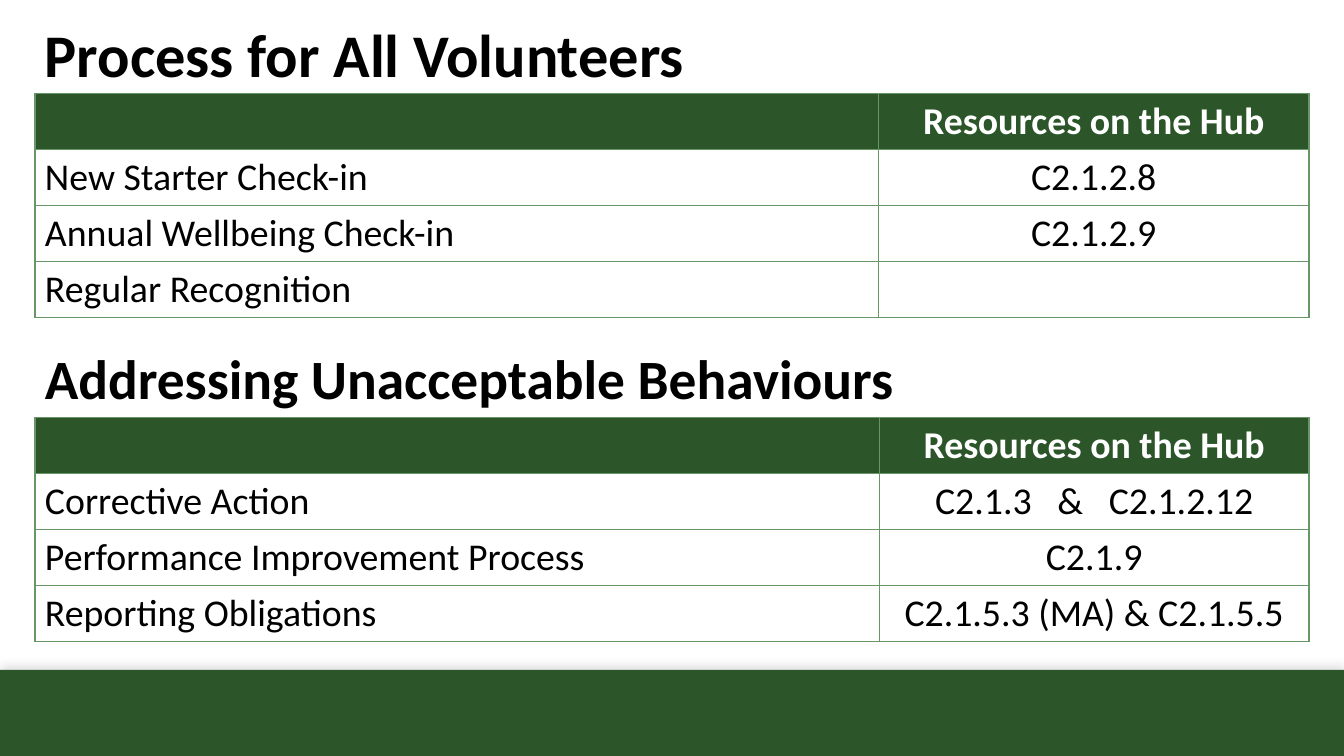
import lxml.etree
import pptx
import pptx.dml.color
import pptx.enum.shapes
import pptx.enum.text
import pptx.oxml.ns
import pptx.util

Cm = pptx.util.Cm
Pt = pptx.util.Pt
RGBColor = pptx.dml.color.RGBColor
ALIGN = pptx.enum.text.PP_ALIGN
qn = pptx.oxml.ns.qn

FOREST = RGBColor(0x2C, 0x56, 0x29)
SAGE = RGBColor(0x69, 0x96, 0x67)
BLACK = RGBColor(0, 0, 0)
WHITE = RGBColor(0xFF, 0xFF, 0xFF)

PAGE_WIDTH, PAGE_HEIGHT = 33.87, 19.05
MARGIN = 0.88
TABLE_WIDTH = 32.11
ROW_HEIGHT = 1.41
HEADING_WIDTH, HEADING_HEIGHT = 29.21, 1.55
BAND_TOP = 16.88
RESOURCES = "Resources on the Hub"


def add_element(parent, tag, **attributes):
    return lxml.etree.SubElement(parent, qn(tag), attributes)


def add_color(parent, color):
    return add_element(parent, "a:srgbClr", val=str(color))


def write(frame, text, size=27, color=BLACK, bold=False, align=ALIGN.LEFT,
          line_spacing=None):
    """Fill a frame with one paragraph; text is a string or (string, tracking) pairs."""
    para = frame.paragraphs[0]
    para.alignment = align
    para.line_spacing = line_spacing
    pieces = [(text, 0)] if isinstance(text, str) else text
    for words, tracking in pieces:
        span = para.add_run()
        span.text = words
        span.font.name = "Calibri"
        span.font.size = Pt(size)
        span.font.bold = bold
        span.font.color.rgb = color
        if tracking:
            span.font._element.set("spc", str(tracking))


class VolunteerSlide:
    def __init__(self, page):
        self.page = page

    def band(self, top):
        """Draw the footer band with a soft shadow above it."""
        box = self.page.shapes.add_shape(
            pptx.enum.shapes.MSO_SHAPE.RECTANGLE,
            0, Cm(top), Cm(PAGE_WIDTH), Cm(PAGE_HEIGHT - top))
        box.fill.solid()
        box.fill.fore_color.rgb = FOREST
        box.line.fill.background()
        box.shadow.inherit = False
        effects = box._element.spPr.find(qn("a:effectLst"))
        shadow = add_element(effects, "a:outerShdw", blurRad=str(Pt(7)),
                             dist=str(Pt(3)), dir="16200000", rotWithShape="0")
        add_element(add_color(shadow, BLACK), "a:alpha", val="13000")

    def heading(self, text, top, size, line_spacing):
        box = self.page.shapes.add_textbox(
            Cm(MARGIN), Cm(top), Cm(HEADING_WIDTH), Cm(HEADING_HEIGHT))
        box.text_frame.word_wrap = True
        box.text_frame.vertical_anchor = pptx.enum.text.MSO_ANCHOR.MIDDLE
        write(box.text_frame, text, size=size, bold=True, line_spacing=line_spacing)

    def border(self, cell):
        properties = cell._tc.get_or_add_tcPr()
        for side in ("L", "R", "T", "B"):
            line = add_element(properties, f"a:ln{side}", w=str(Pt(1)))
            add_color(add_element(line, "a:solidFill"), SAGE)

    def table(self, rows, top, first_width):
        table = self.page.shapes.add_table(
            len(rows), 2, Cm(MARGIN), Cm(top),
            Cm(TABLE_WIDTH), Cm(ROW_HEIGHT * len(rows))).table
        table.horz_banding = False
        table.columns[0].width = Cm(first_width)
        table.columns[1].width = Cm(TABLE_WIDTH - first_width)
        for row, texts in enumerate(rows):
            is_header = row == 0
            for column, text in enumerate(texts):
                cell = table.cell(row, column)
                self.border(cell)
                cell.fill.solid()
                cell.fill.fore_color.rgb = FOREST if is_header else WHITE
                if text:
                    write(cell.text_frame, text, bold=is_header,
                          color=WHITE if is_header else BLACK,
                          align=ALIGN.CENTER if column else ALIGN.LEFT)


def main():
    deck = pptx.Presentation()
    deck.slide_width, deck.slide_height = Cm(PAGE_WIDTH), Cm(PAGE_HEIGHT)
    slide = VolunteerSlide(deck.slides.add_slide(deck.slide_layouts[6]))

    slide.band(BAND_TOP)
    slide.heading("Process for All Volunteers", 0.69, 43.2, 0.9)
    slide.table([
        ("", RESOURCES),
        ("New Starter Check-in", "C2.1.2.8"),
        ("Annual Wellbeing Check-in", "C2.1.2.9"),
        ("Regular Recognition", ""),
    ], 2.36, 21.26)

    slide.heading("Addressing Unacceptable Behaviours", 8.94, 39.6, 0.7)
    slide.table([
        ("", RESOURCES),
        ("Corrective Action", [("C2.1.3", 0), (" &", 1220), (" C2.1.2.12", 0)]),
        ("Performance Improvement Process", "C2.1.9"),
        ("Reporting Obligations", "C2.1.5.3 (MA) & C2.1.5.5"),
    ], 10.52, 21.28)

    deck.save("out.pptx")


if __name__ == "__main__":
    main()
